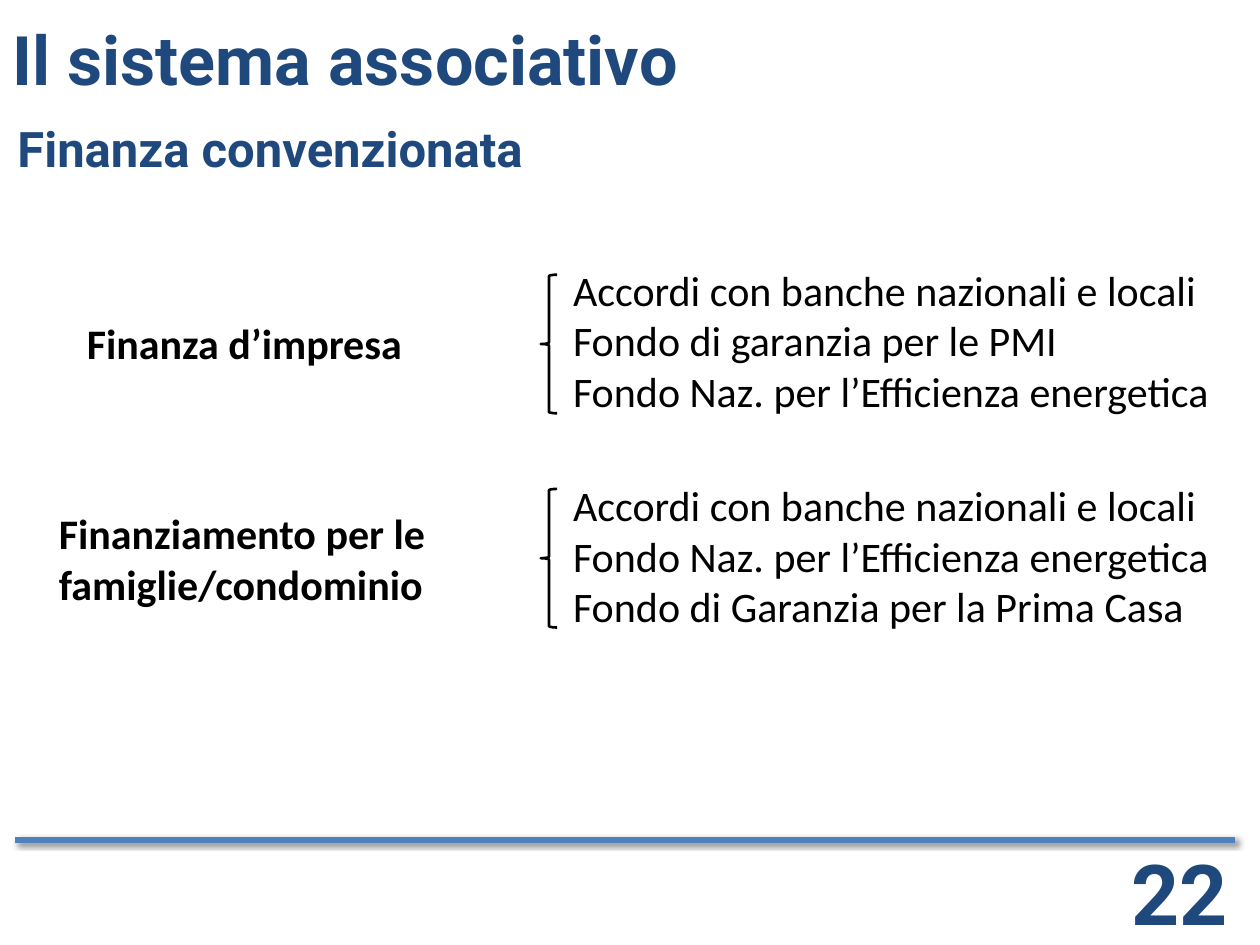
from dataclasses import dataclass

from lxml import etree
from pptx import Presentation
from pptx.dml.color import RGBColor as RGB
from pptx.enum.shapes import MSO_CONNECTOR as Link, MSO_SHAPE as Shape
from pptx.enum.text import MSO_ANCHOR as Anchor, MSO_AUTO_SIZE as Fit, PP_ALIGN as Align
from pptx.oxml import parse_xml
from pptx.oxml.ns import nsdecls, qn
from pptx.util import Pt


@dataclass(frozen=True)
class Theme:
    navy: RGB = RGB(0x1F, 0x49, 0x7D)
    blue: RGB = RGB(0x4F, 0x81, 0xBD)
    black: RGB = RGB(0, 0, 0)
    head: str = "Roboto"
    body: str = "Calibri"
    title: float = 39
    sub: float = 28
    text: float = 24
    page: float = 48


@dataclass(frozen=True)
class Box:
    left: float
    top: float
    width: float
    height: float

    def place(self) -> tuple:
        return Pt(self.left), Pt(self.top), Pt(self.width), Pt(self.height)


@dataclass(frozen=True)
class Style:
    font: str
    size: float
    color: RGB
    bold: bool = True
    anchor: Anchor = Anchor.TOP
    align: Align = Align.LEFT
    fit: Fit = Fit.NONE
    wrap: bool = True


@dataclass(frozen=True)
class Group:
    name: str
    label: Box
    brace: Box
    list: Box
    items: tuple[str, ...]


THEME = Theme()
TITLE = Style(THEME.head, THEME.title, THEME.navy, anchor=Anchor.MIDDLE)
SUB = Style(THEME.head, THEME.sub, THEME.navy, anchor=Anchor.MIDDLE)
PAGE = Style(THEME.head, THEME.page, THEME.navy, anchor=Anchor.BOTTOM, align=Align.CENTER)
LABEL = Style(THEME.body, THEME.text, THEME.black, fit=Fit.SHAPE_TO_FIT_TEXT)
ITEM = Style(THEME.body, THEME.text, THEME.black, bold=False,
             fit=Fit.SHAPE_TO_FIT_TEXT, wrap=False)

BANKS = "Accordi con banche nazionali e locali"
ENERGY = "Fondo Naz. per l’Efficienza energetica"
GROUPS = (
    Group("Finanza d’impresa",
          Box(42.5, 177.8, 215.3, 36), Box(309, 157, 9.4, 79.2), Box(320.4, 147.6, 382, 116.6),
          (BANKS, "Fondo di garanzia per le PMI", ENERGY)),
    Group("Finanziamento per le famiglie/condominio",
          Box(26.6, 286.6, 257, 65.5), Box(309, 279.4, 9.4, 79.2), Box(320.4, 270.7, 382, 116.6),
          (BANKS, ENERGY, "Fondo di Garanzia per la Prima Casa")),
)


def write(shape, lines: tuple[str, ...], style: Style) -> None:
    frame = shape.text_frame
    frame.text = "\n".join(lines)
    frame.word_wrap = style.wrap
    frame.auto_size = style.fit
    frame.vertical_anchor = style.anchor
    for para in frame.paragraphs:
        para.alignment = style.align
        font = para.font
        font.name, font.size, font.bold = style.font, Pt(style.size), style.bold
        font.color.rgb = style.color


def add_text(slide, box: Box, lines: tuple[str, ...], style: Style) -> None:
    write(slide.shapes.add_textbox(*box.place()), lines, style)


def add_title(slide, box: Box, text: str) -> None:
    title = slide.shapes.title
    title.left, title.top, title.width, title.height = box.place()
    write(title, (text,), TITLE)


def add_rule(slide, left: float, right: float, top: float) -> None:
    rule = slide.shapes.add_connector(Link.STRAIGHT, Pt(left), Pt(top), Pt(right), Pt(top))
    rule.line.color.rgb = THEME.blue
    rule.line.width = Pt(3.5)
    props = rule._element.find(qn("p:spPr"))
    props.append(parse_xml(f"<a:effectLst {nsdecls('a')}/>"))
    glow = etree.SubElement(props[-1], qn("a:outerShdw"), blurRad=str(Pt(3)),
                            dist=str(Pt(2)), dir="2700000", rotWithShape="0")
    tint = etree.SubElement(glow, qn("a:srgbClr"), val="000000")
    etree.SubElement(tint, qn("a:alpha"), val="60000")


def add_brace(slide, box: Box) -> None:
    brace = slide.shapes.add_shape(Shape.LEFT_BRACE, *box.place())
    brace.shadow.inherit = False
    brace.fill.background()
    brace.line.color.rgb = THEME.black
    brace.line.width = Pt(1.5)


def add_group(slide, group: Group) -> None:
    add_text(slide, group.label, (group.name,), LABEL)
    add_text(slide, group.list, group.items, ITEM)
    add_brace(slide, group.brace)


def main() -> None:
    deck = Presentation()
    deck.slide_width, deck.slide_height = Pt(720), Pt(540)
    slide = deck.slides.add_slide(deck.slide_layouts[5])
    add_rule(slide, 8.64, 705.6, 479.8)
    add_text(slide, Box(627.8, 479.5, 92.2, 62.6), ("22",), PAGE)
    add_title(slide, Box(0, 0, 694.8, 66.2), "Il sistema associativo")
    add_text(slide, Box(2.9, 51.8, 541.4, 65.5), ("Finanza convenzionata",), SUB)
    for group in GROUPS:
        add_group(slide, group)
    deck.save("out.pptx")


if __name__ == "__main__":
    main()
